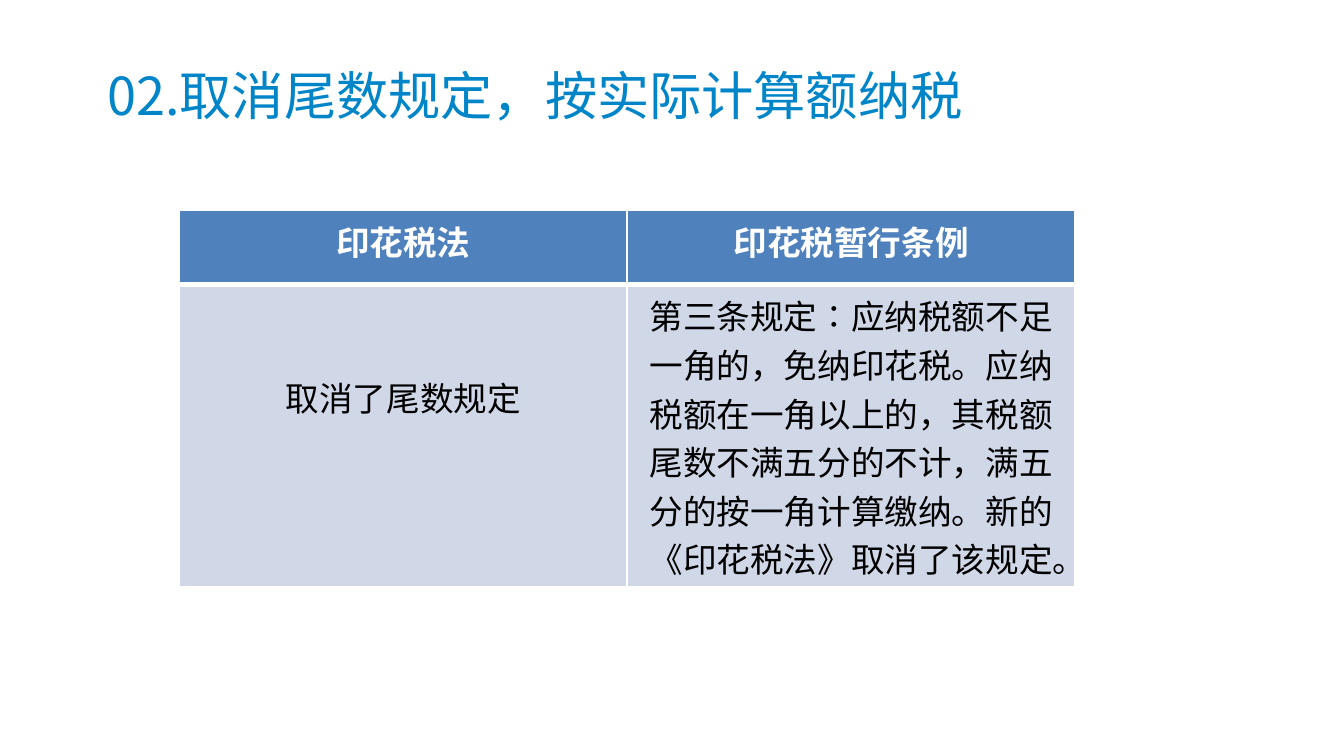
from lxml import etree
from pptx import Presentation
from pptx.dml.color import RGBColor
from pptx.enum.text import MSO_ANCHOR, PP_ALIGN
from pptx.oxml.ns import qn
from pptx.util import Pt

CENTER = PP_ALIGN.CENTER
BOTTOM = MSO_ANCHOR.BOTTOM

TITLE_BLUE = RGBColor(0x00, 0x85, 0xC8)
HEADER_BLUE = RGBColor(0x4F, 0x81, 0xBD)
BODY_BLUE = RGBColor(0xD0, 0xD8, 0xE8)
WHITE = RGBColor(0xFF, 0xFF, 0xFF)
BLACK = RGBColor(0x00, 0x00, 0x00)
CHINESE_FONT = "Noto Sans CJK SC"


def write_text(paragraph, text, color, font_format):
    """Add one run, with the same Chinese font everywhere."""
    run = paragraph.add_run()
    run.text = text
    for name, value in font_format.items():
        setattr(run.font, name, value)
    run.font.color.rgb = color
    east_asian = etree.SubElement(run.font._element, qn("a:ea"))
    east_asian.set("typeface", CHINESE_FONT)


def add_borders(cell, widths):
    """Draw white borders; widths are points by side, ahead of the fill."""
    properties = cell._tc.get_or_add_tcPr()
    for index, (side, width) in enumerate(widths.items()):
        line = etree.Element(qn(f"a:ln{side}"), w=str(Pt(width)))
        fill = etree.SubElement(line, qn("a:solidFill"))
        etree.SubElement(fill, qn("a:srgbClr"), val=str(WHITE))
        properties.insert(index, line)


presentation = Presentation()
presentation.slide_width = Pt(720)
presentation.slide_height = Pt(405)
slide = presentation.slides.add_slide(presentation.slide_layouts[6])

# Title
title = slide.shapes.add_textbox(Pt(50.4), Pt(16.5), Pt(612), Pt(54.7))
title.text_frame.word_wrap = True
title.text_frame.vertical_anchor = BOTTOM
write_text(title.text_frame.paragraphs[0], "02.取消尾数规定，按实际计算额纳税",
           TITLE_BLUE, {"name": CHINESE_FONT, "size": Pt(28)})

# Comparison table
rows = [
    ["印花税法", "印花税暂行条例"],
    ["取消了尾数规定",
     "第三条规定∶应纳税额不足一角的，免纳印花税。应纳税额在一角以上的，"
     "其税额尾数不满五分的不计，满五分的按一角计算缴纳。"
     "新的《印花税法》取消了该规定。"],
]
row_styles = [
    {"height": 39.6, "fill": HEADER_BLUE, "color": WHITE, "bold": True,
     "borders": {"L": 1, "R": 1, "T": 1, "B": 3}},
    {"height": 162, "fill": BODY_BLUE, "color": BLACK, "bold": False,
     "borders": {"L": 1, "R": 1, "T": 3, "B": 1}},
]
fonts = [["Arial", "Arial"], ["Arial", "Calibri"]]

table = slide.shapes.add_table(2, 2, Pt(96), Pt(112.6), Pt(480), Pt(201.6)).table
for row_index, style in enumerate(row_styles):
    table.rows[row_index].height = Pt(style["height"])
    for column_index, text in enumerate(rows[row_index]):
        cell = table.cell(row_index, column_index)
        cell.fill.solid()
        cell.fill.fore_color.rgb = style["fill"]
        add_borders(cell, style["borders"])
        paragraph = cell.text_frame.paragraphs[0]
        paragraph.alignment = CENTER
        write_text(paragraph, text, style["color"],
                   {"name": fonts[row_index][column_index],
                    "size": Pt(18), "bold": style["bold"]})

# Short answer sits lower in its cell
table.cell(1, 0).margin_top = Pt(47.6)

presentation.save("out.pptx")
